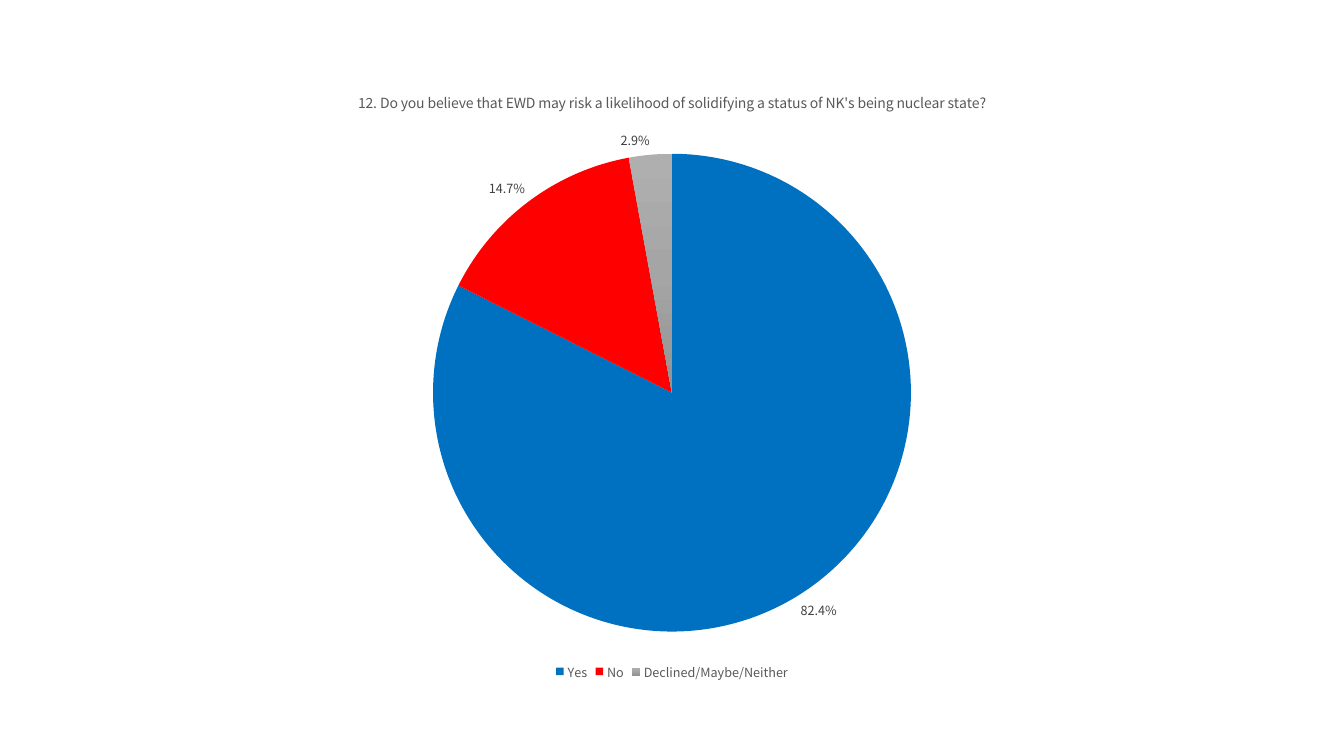
from copy import deepcopy

from pptx import Presentation
from pptx import util as u
from pptx.chart.data import CategoryChartData
from pptx.dml.color import RGBColor
from pptx.enum import chart as charts

FONT = "Noto Sans CJK KR"
BLACK = RGBColor(0x00, 0x00, 0x00)
TITLE_GREY = RGBColor(0x59, 0x59, 0x59)
LABEL_GREY = RGBColor(0x40, 0x40, 0x40)
YES_BLUE = RGBColor(0x00, 0x70, 0xC0)
NO_RED = RGBColor(0xFF, 0x00, 0x00)
NEITHER_GREYS = [
    (0, RGBColor(0xAF, 0xAF, 0xAF)),
    (0.5, RGBColor(0xA5, 0xA5, 0xA5)),
    (1, RGBColor(0x93, 0x93, 0x93)),
]

QUESTION = ("12. Do you believe that EWD may risk a likelihood of "
            "solidifying a status of NK's being nuclear state?")
ANSWERS = {"Yes": 0.824, "No": 0.147, "Declined/Maybe/Neither": 0.029}


def style_font(font, size, color):
    font.name = FONT
    font.size = u.Pt(size)
    font.bold = False
    font.color.rgb = color


def fill_gradient(fill, stops, chart):
    """Fill from top to bottom through three colour stops."""
    fill.gradient()
    fill.gradient_angle = 270
    first_stop = chart.element.xpath(".//a:gsLst/a:gs")[0]
    first_stop.addnext(deepcopy(first_stop))
    for stop, (position, color) in zip(fill.gradient_stops, stops):
        stop.position = position
        stop.color.rgb = color


def add_answer_pie(slide, left, top, width, height):
    data = CategoryChartData(number_format="0.0%")
    data.categories = list(ANSWERS)
    data.add_series(QUESTION, list(ANSWERS.values()))
    chart = slide.shapes.add_chart(
        charts.XL_CHART_TYPE.PIE, u.Inches(left), u.Inches(top),
        u.Inches(width), u.Inches(height), data).chart
    style_font(chart.font, 10, BLACK)

    chart.has_title = True
    chart.chart_title.include_in_layout = False
    run = chart.chart_title.text_frame.paragraphs[0].add_run()
    run.text = QUESTION
    style_font(run.font, 10, TITLE_GREY)

    chart.has_legend = True
    chart.legend.position = charts.XL_LEGEND_POSITION.BOTTOM
    chart.legend.include_in_layout = False
    style_font(chart.legend.font, 9, TITLE_GREY)

    plot = chart.plots[0]
    plot.vary_by_categories = True
    points = plot.series[0].points
    for index, color in enumerate((YES_BLUE, NO_RED)):
        fill = points[index].format.fill
        fill.solid()
        fill.fore_color.rgb = color
    fill_gradient(points[2].format.fill, NEITHER_GREYS, chart)

    labels = plot.series[0].data_labels
    labels.show_value = True
    labels.number_format = "0.0%"
    labels.number_format_is_linked = False
    labels.position = charts.XL_LABEL_POSITION.OUTSIDE_END
    style_font(labels.font, 9, LABEL_GREY)


def main():
    presentation = Presentation()
    presentation.slide_width = u.Inches(13.33)
    presentation.slide_height = u.Inches(7.5)
    slide = presentation.slides.add_slide(presentation.slide_layouts[6])
    add_answer_pie(slide, 0.7, 0.7, 11.93, 6.09)
    presentation.save("out.pptx")


if __name__ == "__main__":
    main()
